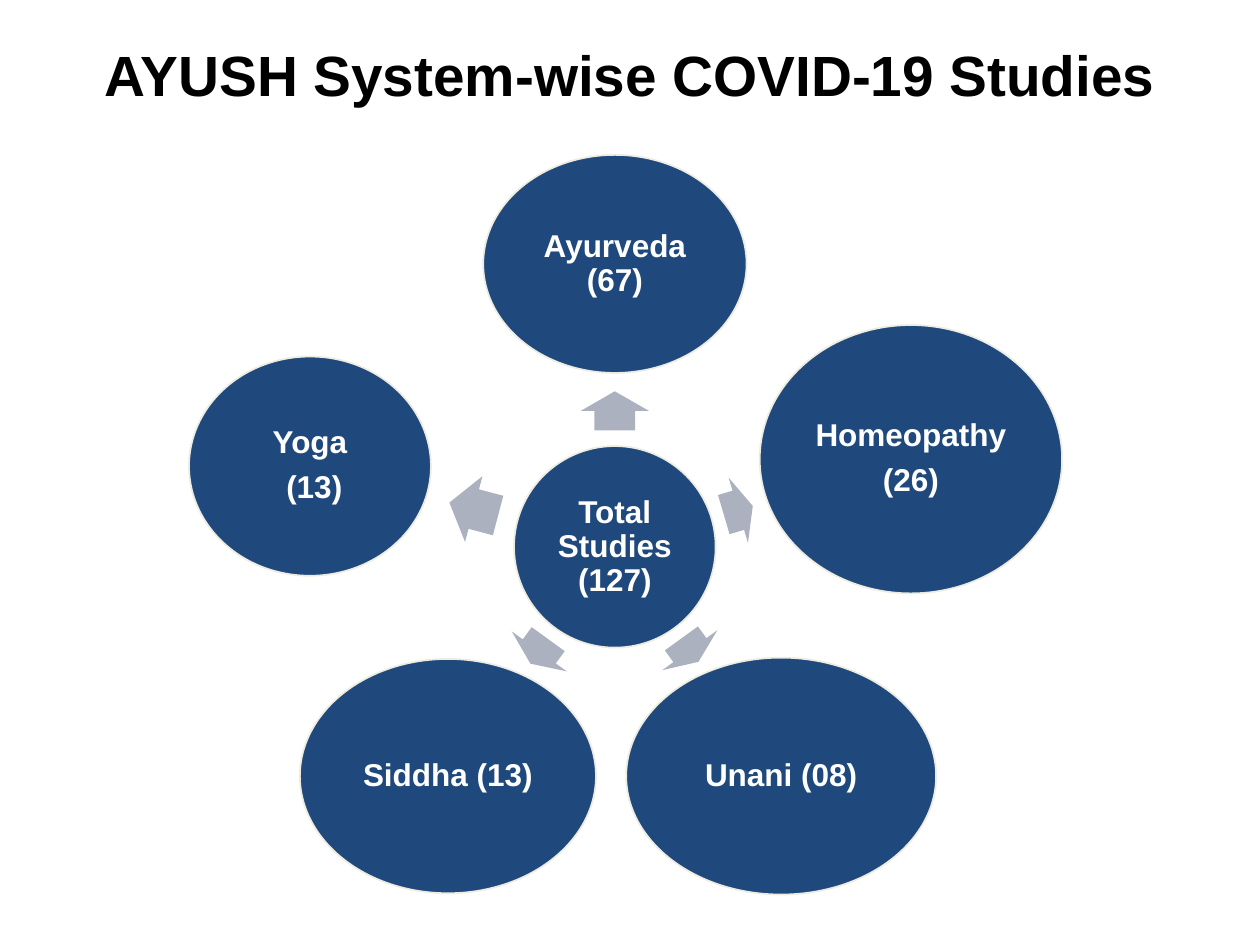
from pptx import Presentation
from pptx.dml.color import RGBColor as RGB
from pptx.enum.shapes import MSO_SHAPE as Shape
from pptx.enum.text import MSO_ANCHOR as Anchor, PP_ALIGN as Align
from pptx.util import Inches, Pt

WIDE, HIGH = Inches(10), Inches(7.5)
HUES = {"disc": "1F497D", "rim": "EEECE1", "arrow": "ACB1BF",
        "title": "000000", "label": "FFFFFF"}
PARA = {"alignment": Align.CENTER, "line_spacing": 0.9}
GAP = Pt(6.3)
FONT = {"name": "Arial", "bold": True}
BREADTH = 7.2

# Centre x, centre y, width, height in percent of the slide
HUB = (["Total Studies (127)"], (48.8, 57.87, 16, 21.33))
# Lines, disc, then arrow: centre x, centre y, length, angle
SYSTEMS = [
    (["Ayurveda (67)"], (48.8, 27.93, 20.9, 23.07), (48.8, 43.47, 3.1, 270)),
    (["Homeopathy", "(26)"], (72.3, 48.6, 24, 28.4), (58.6, 54, 2.4, 343.5)),
    (["Unani (08)"], (62, 82.13, 24.6, 25.07), (54.75, 68.8, 2.3, 54)),
    (["Siddha (13)"], (35.55, 82.13, 23.5, 24.8), (42.8, 68.93, 2.4, 126)),
    (["Yoga", " (13)"], (24.6, 49.33, 19.2, 23.2), (37.6, 53.87, 4, 194.8)),
]


def put(obj, vals):
    for key, val in vals.items():
        setattr(obj, key, val)


def frame(x, y, w, h):
    """Turn a centre and size in percent into left, top, width, height."""
    return (int((x - w / 2) * WIDE / 100), int((y - h / 2) * HIGH / 100),
            int(w * WIDE / 100), int(h * HIGH / 100))


def write(text, lines, size, hue):
    text.word_wrap = True
    for i, line in enumerate(lines):
        para = text.add_paragraph() if i else text.paragraphs[0]
        para.text = line
        put(para, PARA)
        put(para.font, {**FONT, "size": Pt(size)})
        para.font.color.rgb = RGB.from_string(HUES[hue])
        if len(lines) > 1:
            para.space_after = GAP


def add_solid(slide, kind, box, hue):
    shape = slide.shapes.add_shape(kind, *frame(*box))
    shape.shadow.inherit = False
    shape.fill.solid()
    shape.fill.fore_color.rgb = RGB.from_string(HUES[hue])
    return shape


def add_disc(slide, lines, box):
    disc = add_solid(slide, Shape.OVAL, box, "disc")
    disc.line.color.rgb = RGB.from_string(HUES["rim"])
    disc.line.width = Pt(1)
    text = disc.text_frame
    sides = ("left", "top", "right", "bottom")
    put(text, {f"margin_{side}": Inches(0.03) for side in sides})
    text.vertical_anchor = Anchor.MIDDLE
    write(text, lines, 18, "label")


def add_arrow(slide, x, y, length, angle):
    arrow = add_solid(slide, Shape.RIGHT_ARROW, (x, y, length, BREADTH), "arrow")
    arrow.line.fill.background()
    arrow.adjustments[0], arrow.adjustments[1] = 0.6, 0.5
    arrow.rotation = angle


def add_title(slide, line):
    title = slide.shapes.title
    left, top, width, height = frame(50, 10.8, 90, 12.8)
    put(title, {"left": left, "top": top, "width": width, "height": height})
    title.text_frame.vertical_anchor = Anchor.TOP
    write(title.text_frame, [line], 32.4, "title")


def main():
    deck = Presentation()
    put(deck, {"slide_width": WIDE, "slide_height": HIGH})
    slide = deck.slides.add_slide(deck.slide_layouts[5])
    add_title(slide, "AYUSH System-wise COVID-19 Studies")
    add_disc(slide, *HUB)
    for lines, disc, arrow in SYSTEMS:
        add_arrow(slide, *arrow)
        add_disc(slide, lines, disc)
    deck.save("out.pptx")


if __name__ == "__main__":
    main()
